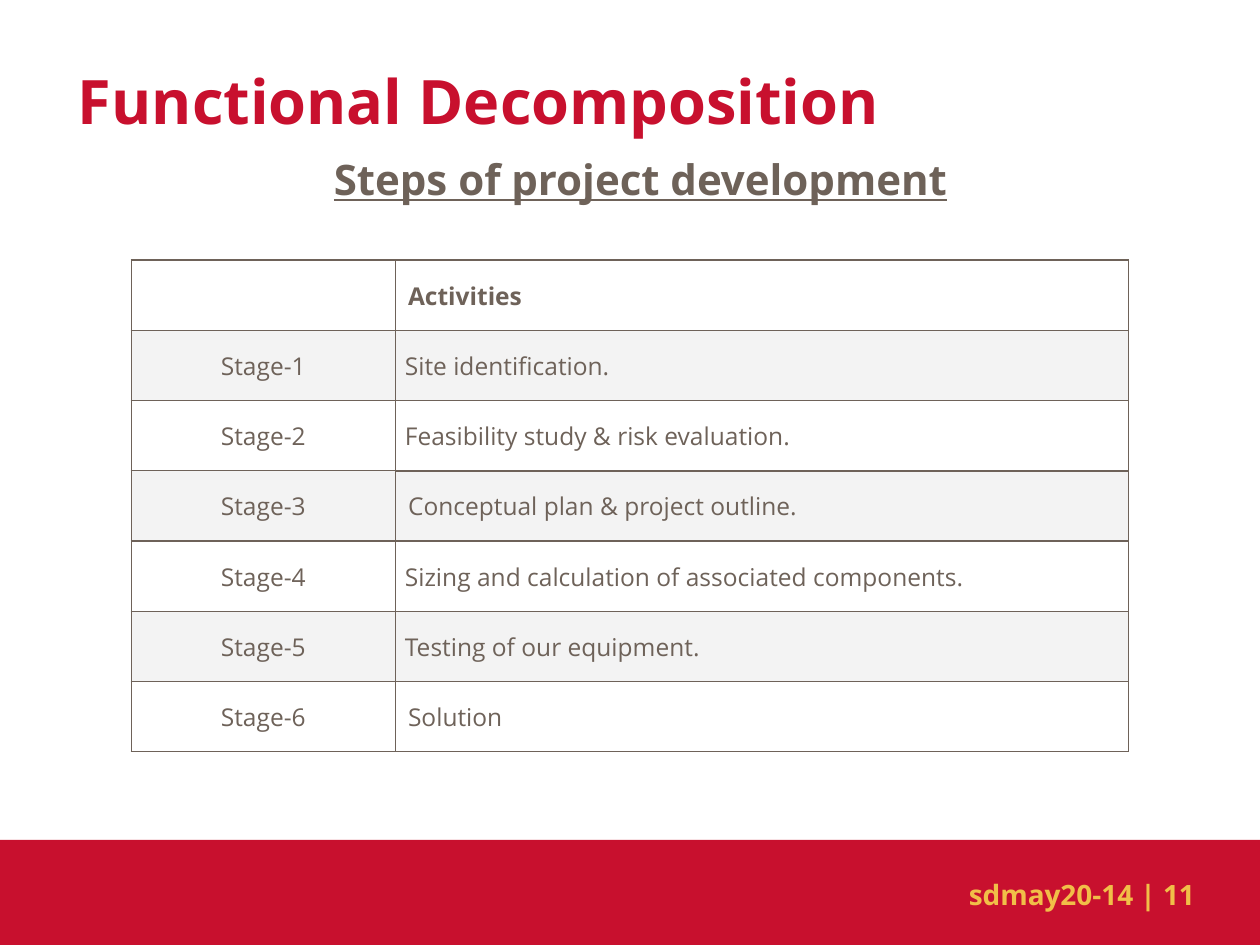
import pptx
import pptx.dml.color
import pptx.enum.shapes
import pptx.enum.text
import pptx.oxml
import pptx.oxml.ns
import pptx.util

Pt = pptx.util.Pt
RGBColor = pptx.dml.color.RGBColor
ALIGN = pptx.enum.text.PP_ALIGN
ANCHOR = pptx.enum.text.MSO_ANCHOR

RED = RGBColor(0xC8, 0x10, 0x2E)
GRAY = RGBColor(0x6E, 0x62, 0x59)
GOLD = RGBColor(0xF1, 0xBE, 0x48)
BAND = RGBColor(0xF3, 0xF3, 0xF3)
WHITE = RGBColor(0xFF, 0xFF, 0xFF)
FONT = "Open Sans"

WIDTH, HEIGHT = 720, 540
FOOTER_HEIGHT = 60

# text, (left, top, width, height), alignment, anchor, font
TEXTS = [
    ("Functional Decomposition", (37.5, 12, 612, 90), ALIGN.LEFT, ANCHOR.MIDDLE,
     {"size": Pt(35), "bold": True, "color": RED}),
    ("Steps of project development", (66, 84, 600, 40), ALIGN.CENTER, ANCHOR.TOP,
     {"size": Pt(24), "bold": True, "underline": True, "color": GRAY}),
    ("sdmay20-14 | 11", (498, 498, 192, 30), ALIGN.RIGHT, ANCHOR.TOP,
     {"size": Pt(16), "bold": True, "color": GOLD}),
]

# stage, activity, side inset of the activity, border width of the activity
STAGES = [
    ("", "Activities", 7.2, 0.75),
    ("Stage-1", "Site identification.", 5.4, 1),
    ("Stage-2", "Feasibility study & risk evaluation.", 5.4, 1),
    ("Stage-3", "Conceptual plan & project outline.", 7.2, 0.75),
    ("Stage-4", "Sizing and calculation of associated components.", 5.4, 1),
    ("Stage-5", "Testing of our equipment.", 5.4, 1),
    ("Stage-6", "Solution", 7.2, 0.75),
]
TABLE_LEFT, TABLE_TOP = 75, 148.6
COLUMN_WIDTHS = (151, 419)
ROW_HEIGHT = 40.15


def write(paragraph, text, alignment, font):
    paragraph.alignment = alignment
    paragraph.font.size = font["size"]
    if not text:
        return
    run = paragraph.add_run()
    run.text = text
    run.font.name = FONT
    for name, value in font.items():
        if name == "color":
            run.font.color.rgb = value
        else:
            setattr(run.font, name, value)


def add_borders(cell, widths):
    """Line the cell; widths are in points, for left, right, top and bottom."""
    properties = cell._tc.get_or_add_tcPr()
    for index, (side, width) in enumerate(zip("LRTB", widths)):
        line = pptx.oxml.parse_xml(
            f'<a:ln{side} {pptx.oxml.ns.nsdecls("a")} w="{Pt(width)}">'
            f'<a:solidFill><a:srgbClr val="{GRAY}"/></a:solidFill></a:ln{side}>')
        properties.insert(index, line)


def add_footer(slide):
    footer = slide.shapes.add_shape(
        pptx.enum.shapes.MSO_SHAPE.RECTANGLE,
        Pt(0), Pt(HEIGHT - FOOTER_HEIGHT), Pt(WIDTH), Pt(FOOTER_HEIGHT))
    footer.shadow.inherit = False
    footer.fill.solid()
    footer.fill.fore_color.rgb = RED
    footer.line.fill.background()


def add_text(slide, text, box, alignment, anchor, font):
    frame = slide.shapes.add_textbox(*map(Pt, box)).text_frame
    frame.word_wrap = True
    frame.vertical_anchor = anchor
    write(frame.paragraphs[0], text, alignment, font)


def add_stage_table(slide):
    table = slide.shapes.add_table(
        len(STAGES), len(COLUMN_WIDTHS), Pt(TABLE_LEFT), Pt(TABLE_TOP),
        Pt(sum(COLUMN_WIDTHS)), Pt(ROW_HEIGHT * len(STAGES))).table
    table.first_row = table.horz_banding = False
    for column, width in zip(table.columns, COLUMN_WIDTHS):
        column.width = Pt(width)
    for index, (stage, activity, inset, border) in enumerate(STAGES):
        table.rows[index].height = Pt(ROW_HEIGHT)
        font = {"size": Pt(14), "bold": index == 0, "color": GRAY}
        bottom = 0.75 if index == len(STAGES) - 1 else 1
        top = 0.75 if index == 0 else 1
        columns = [
            (stage, ALIGN.CENTER, 7.2, (0.75,) * 4),
            (activity, ALIGN.LEFT, inset, (border, border, top, bottom)),
        ]
        for column, (text, alignment, side, widths) in enumerate(columns):
            cell = table.cell(index, column)
            margins = {"left": side, "right": side, "top": 10.8, "bottom": 7.2}
            for name, value in margins.items():
                setattr(cell, f"margin_{name}", Pt(value))
            cell.fill.solid()
            cell.fill.fore_color.rgb = BAND if index % 2 else WHITE
            add_borders(cell, widths)
            write(cell.text_frame.paragraphs[0], text, alignment, font)


def main():
    presentation = pptx.Presentation()
    presentation.slide_width, presentation.slide_height = Pt(WIDTH), Pt(HEIGHT)
    slide = presentation.slides.add_slide(presentation.slide_layouts[6])
    slide.background.fill.solid()
    slide.background.fill.fore_color.rgb = WHITE
    add_footer(slide)
    for item in TEXTS:
        add_text(slide, *item)
    add_stage_table(slide)
    presentation.save("out.pptx")


if __name__ == "__main__":
    main()
